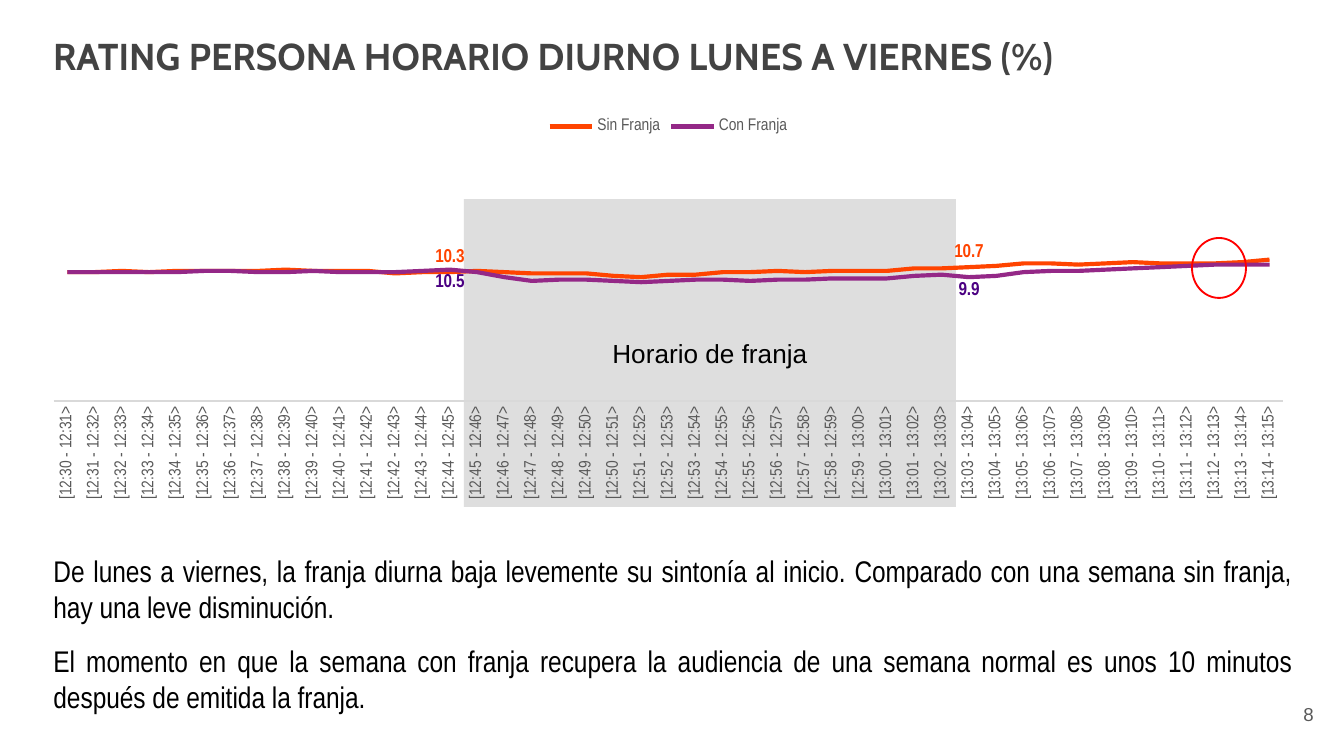
from dataclasses import dataclass
from lxml import etree
from pptx import Presentation
from pptx.chart.data import CategoryChartData
from pptx.dml.color import RGBColor
from pptx.enum.chart import (XL_CHART_TYPE, XL_LABEL_POSITION,
                             XL_LEGEND_POSITION, XL_TICK_MARK)
from pptx.enum.shapes import MSO_SHAPE
from pptx.enum.text import MSO_ANCHOR, MSO_AUTO_SIZE, PP_ALIGN
from pptx.oxml import parse_xml
from pptx.oxml.ns import qn
from pptx.util import Emu, Pt

LINE = XL_CHART_TYPE.LINE
ABOVE, BELOW = XL_LABEL_POSITION.ABOVE, XL_LABEL_POSITION.BELOW
TOP_KEY = XL_LEGEND_POSITION.TOP
NO_TICK = XL_TICK_MARK.NONE
RECT, OVAL = MSO_SHAPE.RECTANGLE, MSO_SHAPE.OVAL
TOP, MID = MSO_ANCHOR.TOP, MSO_ANCHOR.MIDDLE
NO_FIT = MSO_AUTO_SIZE.NONE
LEFT, MIDDLE = PP_ALIGN.LEFT, PP_ALIGN.CENTER
RIGHT, FULL = PP_ALIGN.RIGHT, PP_ALIGN.JUSTIFY
PX = 914400 / 134.4


@dataclass(frozen=True)
class Theme:
    head: str = "Cabin"
    sans: str = "Arial"
    slim: str = "Arial Narrow"
    black: str = "000000"
    dark: str = "434343"
    gray: str = "595959"
    rule: str = "D9D9D9"
    band: str = "9B9B9B"
    red: str = "FF0000"
    orange: str = "FF4400"
    plum: str = "942887"
    violet: str = "4B0082"
    title: int = 20
    body: int = 16
    note: int = 14
    small: int = 10
    tiny: int = 9


def px(*nums):
    return [Emu(round(n * PX)) for n in nums]


def rgb(code):
    return RGBColor.from_string(code)


def style(font, face, size, color, bold=False):
    font.name, font.size, font.bold = face, Pt(size), bold
    font.color.rgb = rgb(color)


def clear_fill():
    return parse_xml(
        '<c:spPr xmlns:c="http://schemas.openxmlformats.org/drawingml/2006/chart"'
        ' xmlns:a="http://schemas.openxmlformats.org/drawingml/2006/main">'
        '<a:noFill/><a:ln><a:noFill/></a:ln></c:spPr>')


class Deck:
    def __init__(self, theme):
        self.t = theme
        self.prs = Presentation()
        self.prs.slide_width, self.prs.slide_height = px(1344, 756)
        self.slide = self.prs.slides.add_slide(self.prs.slide_layouts[1])

    def text(self, shape, lines, face, size, color, align,
             anchor=TOP, bold=False, gap=0):
        frame = shape.text_frame
        frame.word_wrap, frame.auto_size = True, NO_FIT
        frame.vertical_anchor = anchor
        for i, line in enumerate(lines):
            para = frame.add_paragraph() if i else frame.paragraphs[0]
            para.alignment = align
            para.space_before = Pt(gap if i else 0)
            run = para.add_run()
            run.text = line
            style(run.font, face, size, color, bold)
        return frame

    def holder(self, index, box, lines, *look, **more):
        shape = self.slide.placeholders[index]
        shape.left, shape.top, shape.width, shape.height = px(*box)
        frame = self.text(shape, lines, *look, **more)
        for para in frame.paragraphs:
            props = para._p.get_or_add_pPr()
            props.set("marL", "0")
            props.set("indent", "0")
            etree.SubElement(props, qn("a:buNone"))
        return frame

    def label(self, box, line, *look, **more):
        shape = self.slide.shapes.add_textbox(*px(*box))
        self.text(shape, [line], *look, **more)

    def shape(self, kind, box, fill=None, alpha=100, line=None):
        item = self.slide.shapes.add_shape(kind, *px(*box))
        item.shadow.inherit = False
        if fill:
            item.fill.solid()
            item.fill.fore_color.rgb = rgb(fill)
            color = item._element.spPr.find(".//" + qn("a:srgbClr"))
            etree.SubElement(color, qn("a:alpha"), val=str(alpha * 1000))
        else:
            item.fill.background()
        if line:
            item.line.color.rgb, item.line.width = rgb(line), Pt(1)
        else:
            item.line.fill.background()
        return item

    def chart(self, box, cats, rows, marks, peak):
        t = self.t
        data = CategoryChartData()
        data.categories = cats
        for name, vals, *_ in rows:
            data.add_series(name, vals)
        chart = self.slide.shapes.add_chart(LINE, *px(*box), data).chart
        style(chart.font, t.slim, t.small, t.black)
        chart.has_title = False
        chart.has_legend = True
        chart.legend.position = TOP_KEY
        chart.legend.include_in_layout = False
        style(chart.legend.font, t.slim, t.tiny, t.gray)

        # Axes
        axis = chart.category_axis
        axis.major_tick_mark = axis.minor_tick_mark = NO_TICK
        axis.format.line.color.rgb = rgb(t.rule)
        axis.format.line.width = Pt(0.75)
        style(axis.tick_labels.font, t.slim, t.tiny, t.gray)
        turn = axis._element.find(qn("c:txPr")).find(qn("a:bodyPr"))
        turn.set("rot", "-5400000")
        turn.set("vert", "horz")
        scale = chart.value_axis
        scale.minimum_scale, scale.maximum_scale = 0, peak
        scale.has_major_gridlines = False
        scale.visible = False

        # Lines and their marked points
        plot = chart.plots[0]
        plot.vary_by_categories = False
        for series, (_, _, color, ink, side) in zip(plot.series, rows):
            series.smooth = False
            series.format.line.color.rgb = rgb(color)
            series.format.line.width = Pt(2.25)
            series.data_labels.show_value = False
            for mark in marks:
                tag = series.points[mark].data_label
                style(tag.font, t.slim, t.small, ink, True)
                tag.position = side

        # Clear ground and fixed plot area
        space = chart._chartSpace
        space.find(qn("c:txPr")).addprevious(clear_fill())
        area = space.chart.plotArea
        area.append(clear_fill())
        old = area.find(qn("c:layout"))
        if old is not None:
            area.remove(old)
        layout = etree.Element(qn("c:layout"))
        area.insert(0, layout)
        manual = etree.SubElement(layout, qn("c:manualLayout"))
        for key, val in (("layoutTarget", "inner"), ("xMode", "edge"),
                         ("yMode", "edge"), ("x", "0.02"), ("y", "0.19"),
                         ("w", "0.96"), ("h", "0.55")):
            etree.SubElement(manual, qn("c:" + key), val=val)


def clock(mins):
    return f"{mins // 60}:{mins % 60:02}"


def main():
    t = Theme()
    deck = Deck(t)
    start = 12 * 60 + 30
    cats = [f"[{clock(m)} - {clock(m + 1)}>" for m in range(start, start + 45)]
    plain = [10.3, 10.3, 10.4, 10.3, 10.4, 10.4, 10.4, 10.4, 10.5, 10.4, 10.4, 10.4,
             10.2, 10.3, 10.3, 10.4, 10.3, 10.2, 10.2, 10.2, 10, 9.9, 10.1, 10.1,
             10.3, 10.3, 10.4, 10.3, 10.4, 10.4, 10.4, 10.6, 10.6, 10.7, 10.8, 11,
             11, 10.9, 11, 11.1, 11, 11, 11, 11.1, 11.3]
    aired = [10.3, 10.3, 10.3, 10.3, 10.3, 10.4, 10.4, 10.3, 10.3, 10.4, 10.3, 10.3,
             10.3, 10.4, 10.5, 10.3, 9.9, 9.6, 9.7, 9.7, 9.6, 9.5, 9.6, 9.7,
             9.7, 9.6, 9.7, 9.7, 9.8, 9.8, 9.8, 10, 10.1, 9.9, 10, 10.3,
             10.4, 10.4, 10.5, 10.6, 10.7, 10.8, 10.9, 10.9, 10.9]

    # Time band behind the chart
    band = deck.shape(RECT, (464, 199, 492, 308), fill=t.band, alpha=32)
    deck.text(band, ["Horario de franja"], t.sans, t.note, t.black, MIDDLE, anchor=MID)

    # Title, text and page number
    frame = deck.holder(0, (40, 20, 1128, 83),
                        ["RATING PERSONA HORARIO DIURNO LUNES A VIERNES (%)"],
                        t.head, t.title, t.dark, LEFT, bold=True)
    frame.margin_top, frame.margin_left = px(13, 13)
    deck.holder(1, (40, 546, 1267, 176), [
        "De lunes a viernes, la franja diurna baja levemente su sintonía al inicio. "
        "Comparado con una semana sin franja, hay una leve disminución.",
        "El momento en que la semana con franja recupera la audiencia de una semana "
        "normal es unos 10 minutos después de emitida la franja."],
        t.slim, t.body, t.black, FULL, gap=10)
    deck.label((1246, 685, 81, 58), "8", t.sans, t.small, t.gray, RIGHT, anchor=MID)

    # Rating chart and the point of recovery
    deck.chart((28, 103, 1281, 403), cats,
               [("Sin Franja", plain, t.orange, t.orange, ABOVE),
                ("Con Franja", aired, t.plum, t.violet, BELOW)],
               marks=(14, 33), peak=17.7)
    deck.shape(OVAL, (1192, 238, 54, 60), line=t.red)
    deck.prs.save("out.pptx")


if __name__ == "__main__":
    main()
